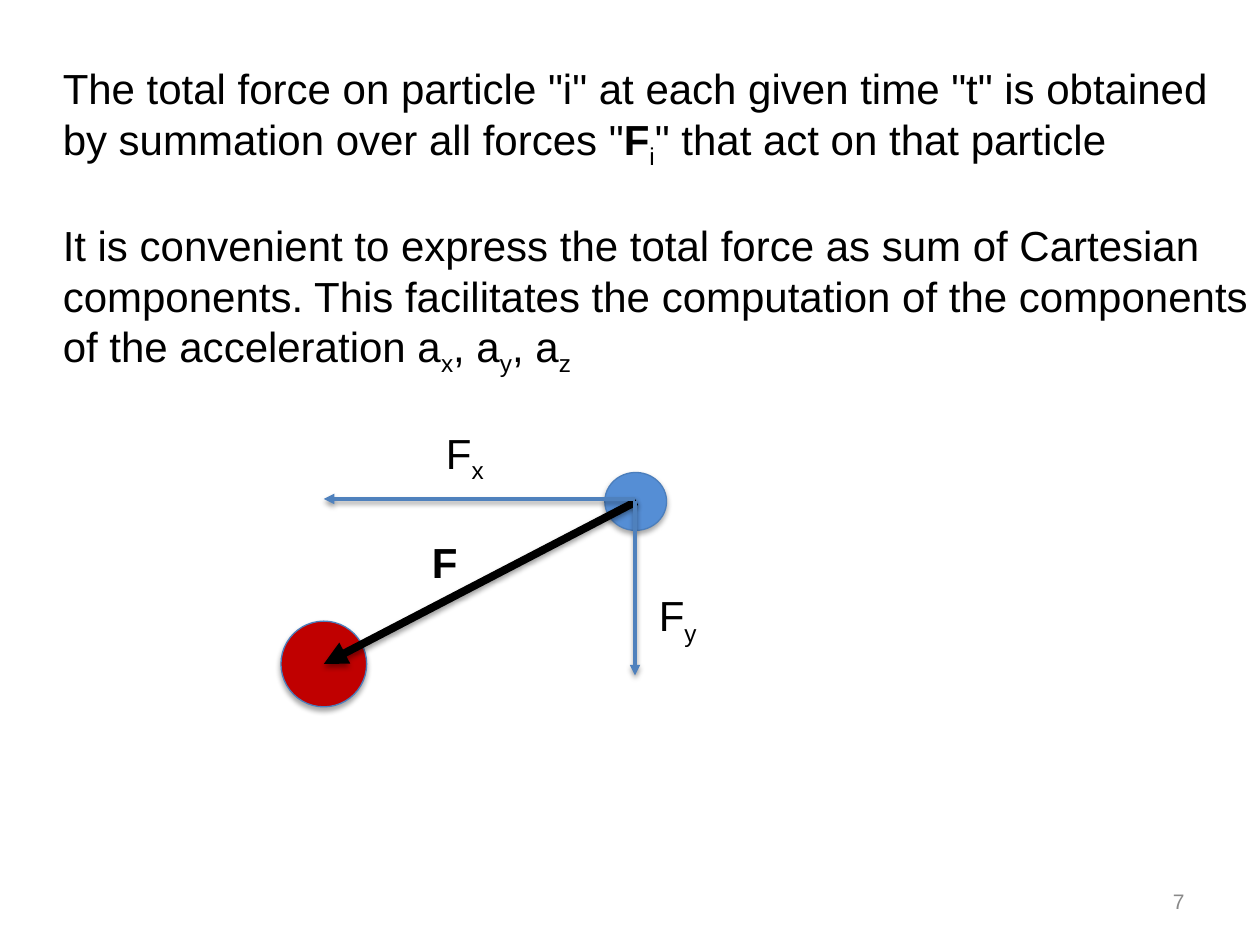
from lxml import etree
from pptx import Presentation
from pptx.dml.color import RGBColor
from pptx.enum import shapes, text
from pptx.oxml import parse_xml
from pptx.oxml.ns import nsdecls, qn
from pptx.util import Inches, Pt

BLACK = RGBColor(0x00, 0x00, 0x00)
GREY = RGBColor(0x89, 0x89, 0x89)
BLUE = RGBColor(0x55, 0x8E, 0xD5)
RED = RGBColor(0xC0, 0x00, 0x00)
OUTLINE = RGBColor(0x4B, 0x7E, 0xBC)
ARROW_BLUE = RGBColor(0x4F, 0x81, 0xBD)


def add_text(box, paragraphs, size=24, color=BLACK):
    """Write (text, style) runs per paragraph; style is "", "bold" or "sub"."""
    frame = box.text_frame
    for index, runs in enumerate(paragraphs):
        paragraph = frame.add_paragraph() if index else frame.paragraphs[0]
        for content, style in runs:
            run = paragraph.add_run()
            run.text = content
            run.font.name = "Arial"
            run.font.size = Pt(size)
            run.font.color.rgb = color
            run.font.bold = style == "bold"
            if style == "sub":
                run.font._element.set("baseline", "-25000")
    return frame


def add_shadow(shape, distance, opacity):
    """Append a soft downward shadow; fill and line must already be set."""
    properties = shape._element.spPr
    for effects in properties.findall(qn("a:effectLst")):
        properties.remove(effects)
    properties.append(parse_xml(
        f'<a:effectLst {nsdecls("a")}><a:outerShdw blurRad="{Pt(3.1)}" '
        f'dist="{Pt(distance)}" dir="5400000" rotWithShape="0">'
        f'<a:srgbClr val="000000"><a:alpha val="{opacity * 1000}"/></a:srgbClr>'
        '</a:outerShdw></a:effectLst>'))


presentation = Presentation()
presentation.slide_width = Inches(10)
presentation.slide_height = Inches(7.5)
slide = presentation.slides.add_slide(presentation.slide_layouts[6])

# Slide number
number_box = slide.shapes.add_textbox(Inches(7.17), Inches(6.95), Inches(2.33), Inches(0.4))
number_frame = add_text(number_box, [[("7", "")]], size=12, color=GREY)
number_frame.word_wrap = True
number_frame.vertical_anchor = text.MSO_ANCHOR.MIDDLE
number_frame.paragraphs[0].alignment = text.PP_ALIGN.RIGHT

# Particles
particles = [
    (4.8, 3.75, 0.49, 0.46, BLUE),
    (2.23, 4.93, 0.68, 0.68, RED),
]
for left, top, width, height, color in particles:
    particle = slide.shapes.add_shape(
        shapes.MSO_SHAPE.OVAL, Inches(left), Inches(top), Inches(width), Inches(height))
    particle.fill.solid()
    particle.fill.fore_color.rgb = color
    particle.line.color.rgb = OUTLINE
    particle.line.width = Pt(0.75)
    add_shadow(particle, 1.8, 35)

# Total force and its components
arrows = [
    (5.05, 3.98, 2.57, 5.27, BLACK, 4.5),
    (5.04, 3.96, 2.57, 3.96, ARROW_BLUE, 2),
    (5.04, 3.98, 5.04, 5.36, ARROW_BLUE, 2),
]
for x1, y1, x2, y2, color, width in arrows:
    arrow = slide.shapes.add_connector(
        shapes.MSO_CONNECTOR.STRAIGHT, Inches(x1), Inches(y1), Inches(x2), Inches(y2))
    arrow.line.color.rgb = color
    arrow.line.width = Pt(width)
    etree.SubElement(arrow.line._get_or_add_ln(), qn("a:tailEnd"), type="triangle")
    add_shadow(arrow, 1.6, 38)

# Force labels and explanation
explanation = [
    [('The total force on particle "i" at each given time "t" is obtained', "")],
    [('by summation over all forces "', ""), ("F", "bold"), ("i", "sub"),
     ('" that act on that particle', "")],
    [("It is convenient to express the total force as sum of Cartesian", "")],
    [("components. This facilitates the computation of the components", "")],
    [("of the acceleration a", ""), ("x", "sub"), (", a", ""), ("y", "sub"),
     (", a", ""), ("z", "sub")],
]
text_boxes = [
    (3.33, 4.21, 0.41, 0.5, [[("F", "bold")]]),
    (5.13, 4.63, 0.52, 0.5, [[("F", ""), ("y", "sub")]]),
    (3.44, 3.34, 0.52, 0.5, [[("F", ""), ("x", "sub")]]),
    (0.4, 0.45, 9.8, 2.52, explanation),
]
for left, top, width, height, paragraphs in text_boxes:
    box = slide.shapes.add_textbox(Inches(left), Inches(top), Inches(width), Inches(height))
    frame = add_text(box, paragraphs)
    frame.word_wrap = False
    frame.auto_size = text.MSO_AUTO_SIZE.SHAPE_TO_FIT_TEXT
    if paragraphs is explanation:
        frame.paragraphs[2].space_before = Pt(28)

presentation.save("out.pptx")
